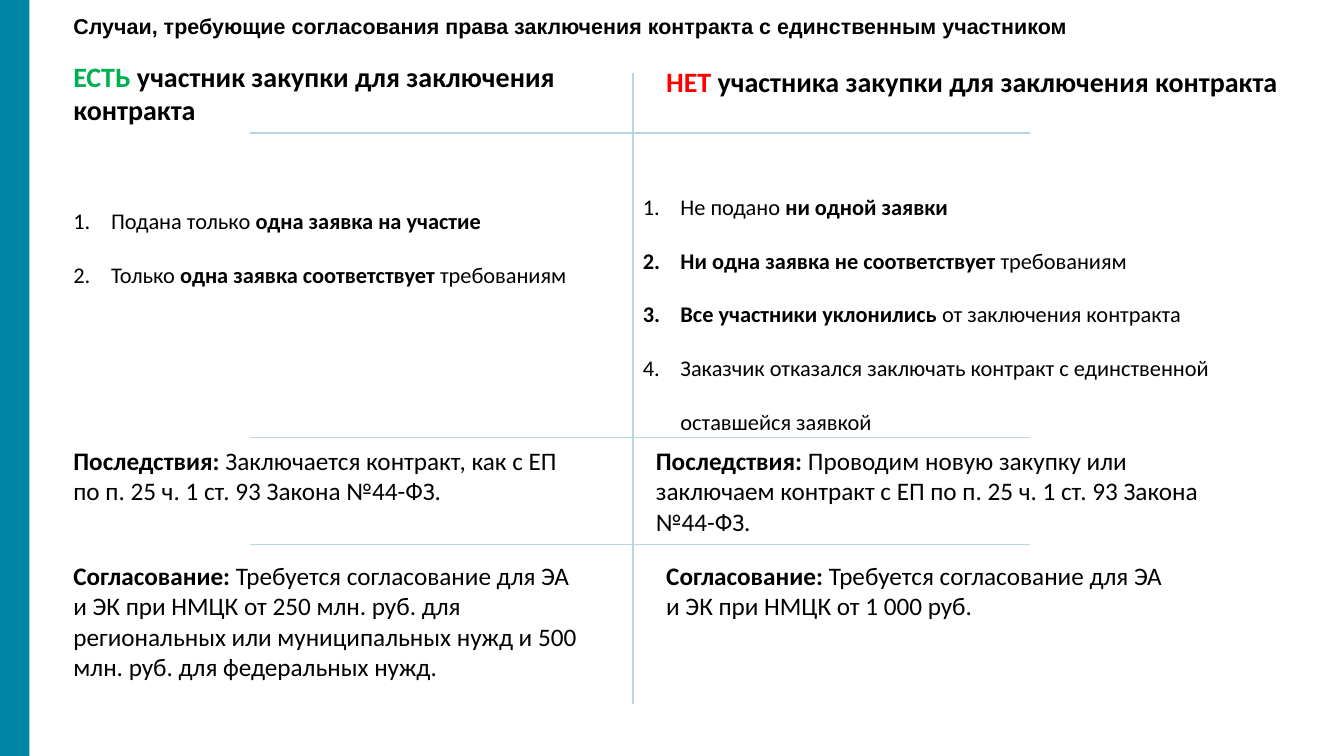
"""Build the slide on approving contracts with a single supplier."""
from lxml import etree
from pptx import Presentation
from pptx.dml.color import RGBColor
from pptx.enum.shapes import MSO_CONNECTOR, MSO_SHAPE
from pptx.enum.text import MSO_AUTO_SIZE
from pptx.oxml.ns import qn
from pptx.util import Cm, Pt

RECT = MSO_SHAPE.RECTANGLE
STRAIGHT = MSO_CONNECTOR.STRAIGHT
GROW = MSO_AUTO_SIZE.SHAPE_TO_FIT_TEXT
BLACK, GREEN, RED, TEAL, PALE = "000000", "00B050", "FF0000", "0085A4", "B6D6E1"
LEFT, RIGHT = 1.6, 16.54


def rgb(value):
    return RGBColor.from_string(value)


def add_text(box, size, paragraphs, font="Calibri", numbered=False):
    tb = s.shapes.add_textbox(*[Cm(v) for v in box])
    tf = tb.text_frame
    tf.word_wrap = True
    tf.auto_size = GROW
    for i, runs in enumerate(paragraphs):
        p = tf.add_paragraph() if i else tf.paragraphs[0]
        if numbered:
            p.line_spacing = 2.0
            pPr = p._p.get_or_add_pPr()
            pPr.set("marL", str(Cm(0.95)))
            pPr.set("indent", str(-Cm(0.95)))
            etree.SubElement(pPr, qn("a:buFont"), typeface="+mj-lt")
            etree.SubElement(pPr, qn("a:buAutoNum"), type="arabicPeriod")
        for text, bold, color in runs:
            r = p.add_run()
            r.text = text
            r.font.name = font
            r.font.size = Pt(size)
            r.font.bold = bold
            r.font.color.rgb = rgb(color)


prs = Presentation()
prs.slide_width, prs.slide_height = Cm(33.87), Cm(19.05)
s = prs.slides.add_slide(prs.slide_layouts[6])

bar = s.shapes.add_shape(RECT, 0, 0, Cm(0.74), prs.slide_height)
bar.shadow.inherit = False
bar.fill.solid()
bar.fill.fore_color.rgb = rgb(TEAL)
bar.line.fill.background()

dividers = [(15.95, 1.83, 15.95, 17.75)]
dividers += [(6.3, y, 25.96, y) for y in (3.35, 11.02, 13.72)]
for ends in dividers:
    line = s.shapes.add_connector(STRAIGHT, *[Cm(v) for v in ends])
    line.line.color.rgb = rgb(PALE)
    line.line.width = Pt(1)
    etree.SubElement(line._element.spPr, qn("a:effectLst"))

title = "Случаи, требующие согласования права заключения контракта с единственным участником"
add_text((LEFT, 0.2, 25.83, 1.14), 15.3, [[(title, True, BLACK)]], font="Arial")

headings = [
    ((LEFT, 1.37, 14, 1.96), "ЕСТЬ", GREEN, " участник закупки для заключения контракта"),
    ((RIGHT, 1.5, 16.94, 1.12), "НЕТ", RED, " участника закупки для заключения контракта"),
]
for box, answer, color, rest in headings:
    add_text(box, 20, [[(answer, True, color), (rest, True, BLACK)]])

cases = [
    ((LEFT, 4.42, 13.46, 2.79), [
        [("Подана только ", False, BLACK), ("одна заявка на участие", True, BLACK)],
        [("Только ", False, BLACK), ("одна заявка соответствует ", True, BLACK),
         ("требованиям", False, BLACK)],
    ]),
    ((15.95, 4.06, 17.53, 6.91), [
        [("Не подано ", False, BLACK), ("ни одной заявки", True, BLACK)],
        [("Ни одна заявка не соответствует", True, BLACK), (" требованиям", False, BLACK)],
        [("Все участники уклонились", True, BLACK), (" от заключения контракта", False, BLACK)],
        [("Заказчик отказался заключать контракт с единственной оставшейся заявкой",
          False, BLACK)],
    ]),
]
for box, items in cases:
    add_text(box, 16, items, numbered=True)

outcomes = [
    ((LEFT, 11.1, 13.46, 1.8), "Последствия: ",
     "Заключается контракт, как с ЕП по п. 25 ч. 1 ст. 93 Закона №44-ФЗ."),
    ((16.28, 11.1, 15.47, 2.57), "Последствия: ",
     "Проводим новую закупку или заключаем контракт с ЕП по п. 25 ч. 1 ст. 93 Закона №44-ФЗ."),
    ((LEFT, 14, 13.46, 3.33), "Согласование: ",
     "Требуется согласование для ЭА и ЭК при НМЦК от 250 млн. руб. для региональных "
     "или муниципальных нужд и 500 млн. руб. для федеральных нужд."),
    ((RIGHT, 14, 13.46, 1.8), "Согласование: ",
     "Требуется согласование для ЭА и ЭК при НМЦК от 1 000 руб."),
]
for box, label, text in outcomes:
    add_text(box, 18, [[(label, True, BLACK), (text, False, BLACK)]])

prs.save("out.pptx")
